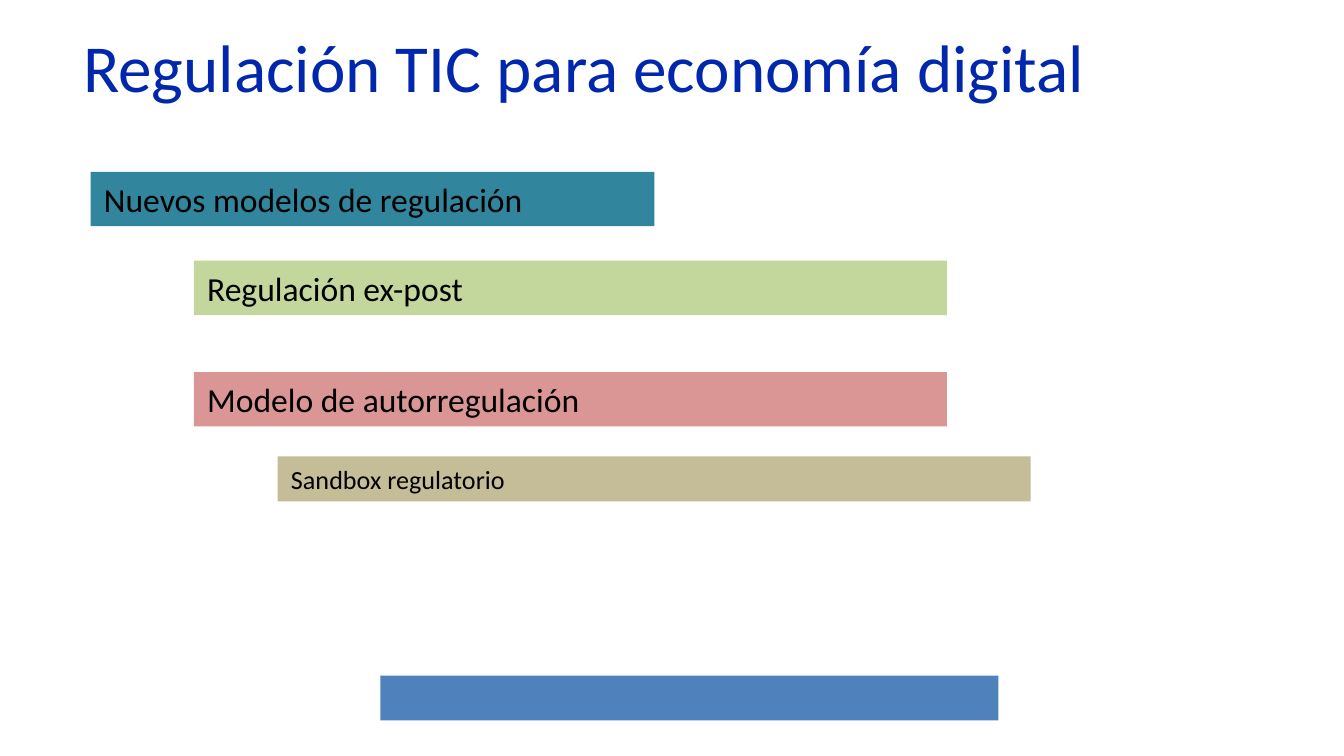
from pptx import Presentation
from pptx.dml.color import RGBColor
from pptx.enum.shapes import MSO_SHAPE
from pptx.enum.text import MSO_ANCHOR, MSO_AUTO_SIZE, PP_ALIGN
from pptx.util import Pt

RECT = MSO_SHAPE.RECTANGLE
TOP, MIDDLE = MSO_ANCHOR.TOP, MSO_ANCHOR.MIDDLE
LEFT = PP_ALIGN.LEFT
NO_AUTOFIT = MSO_AUTO_SIZE.NONE

COLORS = {
    "title": "0127AC", "text": "000000", "teal": "31859C", "green": "C3D69B",
    "red": "D99694", "tan": "C4BD97", "blue": "4F81BD",
}
TITLE = "Regulación TIC para economía digital"
TITLE_BOX = {"left": 37.4, "top": 10.1, "width": 662.4, "height": 104.4}
FOOTER_BOX = (203.8, 362, 331, 24)
BARS = [
    ("Nuevos modelos de regulación", "teal", 0, 92),
    ("Regulación ex-post", "green", 1, 139.7),
    ("Modelo de autorregulación", "red", 1, 199.3),
    ("Sandbox regulatorio", "tan", 2, 244.5),
]
LEVELS = [
    {"left": 48.6, "width": 302, "height": 29.1, "size": 18},
    {"left": 103.9, "width": 403.4, "height": 29.1, "size": 18},
    {"left": 148.8, "width": 403.4, "height": 24.2, "size": 14},
]


def rgb(name):
    """Return the named colour."""
    return RGBColor.from_string(COLORS[name])


def write(sp, text, color, size, anchor=MIDDLE):
    """Write one left-aligned line of text into a shape."""
    tf = sp.text_frame
    frame = {"auto_size": NO_AUTOFIT, "word_wrap": True, "vertical_anchor": anchor}
    for key, value in frame.items():
        setattr(tf, key, value)
    p = tf.paragraphs[0]
    p.alignment = LEFT
    r = p.add_run()
    r.text = text
    for key, value in {"name": "Calibri", "size": Pt(size)}.items():
        setattr(r.font, key, value)
    r.font.color.rgb = rgb(color)


def add_rect(s, box, color):
    """Add a plain filled rectangle."""
    sp = s.shapes.add_shape(RECT, *map(Pt, box))
    sp.shadow.inherit = False
    sp.fill.solid()
    sp.fill.fore_color.rgb = rgb(color)
    sp.line.fill.background()
    return sp


def main():
    """Build and save the slide."""
    prs = Presentation()
    prs.slide_width, prs.slide_height = Pt(720), Pt(405)
    s = prs.slides.add_slide(prs.slide_layouts[5])
    title = s.shapes.title
    for key, value in TITLE_BOX.items():
        setattr(title, key, Pt(value))
    write(title, TITLE, "title", 36, TOP)
    add_rect(s, FOOTER_BOX, "blue")
    for text, color, level, top in BARS:
        fmt = LEVELS[level]
        sp = add_rect(s, (fmt["left"], top, fmt["width"], fmt["height"]), color)
        write(sp, text, "text", fmt["size"])
    prs.save("out.pptx")


if __name__ == "__main__":
    main()
